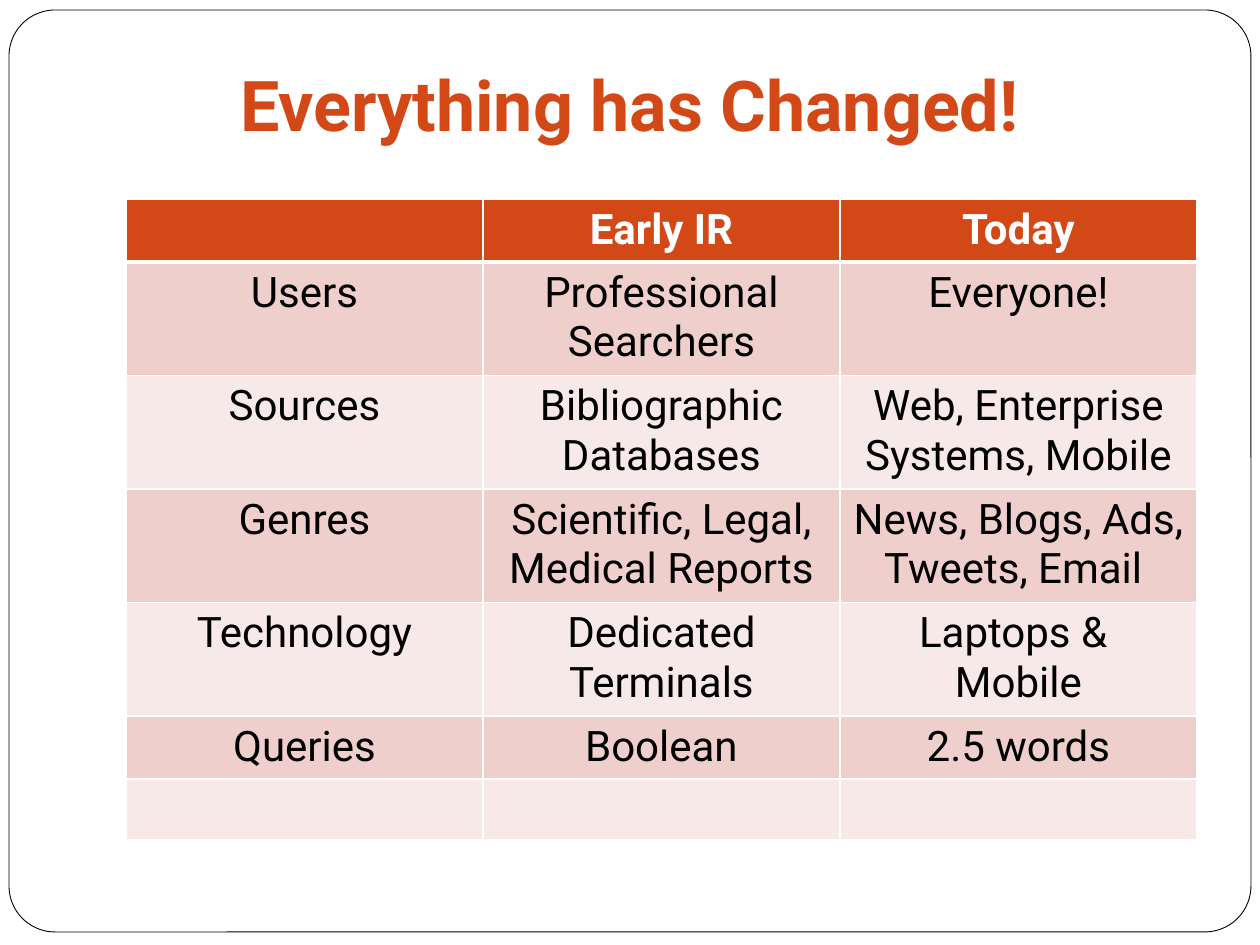
import pptx
import pptx.dml.color
import pptx.enum.shapes
import pptx.enum.text
import pptx.oxml
import pptx.oxml.ns
import pptx.util

# Content: a newline starts a new paragraph
TITLE = "Everything has Changed!"
COMPARISON = [
    ("", "Early IR", "Today"),
    ("Users", "Professional Searchers", "Everyone!"),
    ("Sources", "Bibliographic\nDatabases", "Web, Enterprise Systems, Mobile"),
    ("Genres", "Scientific, Legal, Medical Reports", "News, Blogs, Ads, Tweets, Email "),
    ("Technology", "Dedicated Terminals", "Laptops & \nMobile"),
    ("Queries", "Boolean", "2.5 words"),
    ("", "", ""),
]
TWO_LINE_ROWS = {1, 2, 3, 4}

# Format
COLOURS = {
    "accent": "D34817", "paper": "FFFFFF", "ink": "000000",
    "dark band": "EFCFCC", "light band": "F7E9E8",
}
TITLE_FONT = {"name": "Roboto", "size": pptx.util.Pt(40), "bold": True}
HEADER_FONT = {"name": "Roboto", "size": pptx.util.Pt(24), "bold": True}
BODY_FONT = {**HEADER_FONT, "bold": False}
TITLE_FRAME = {
    "word_wrap": True, "vertical_anchor": pptx.enum.text.MSO_ANCHOR.BOTTOM,
    "margin_left": pptx.util.Inches(0.1), "margin_right": pptx.util.Inches(0.1),
    "margin_top": pptx.util.Inches(0.05), "margin_bottom": pptx.util.Inches(0.1),
}
EMU_PER_PX = 914400 / 126
ONE_LINE, TWO_LINES = 61, 112
COLUMN_WIDTH = 357


def px(*lengths):
    return [pptx.util.Emu(round(n * EMU_PER_PX)) for n in lengths]


def rgb(colour):
    return pptx.dml.color.RGBColor.from_string(COLOURS[colour])


def apply(target, values):
    for attribute, value in values.items():
        setattr(target, attribute, value)


def write(frame, text, font, colour):
    frame.text = text
    for paragraph in frame.paragraphs:
        paragraph.alignment = pptx.enum.text.PP_ALIGN.CENTER
        for run in paragraph.runs:
            apply(run.font, font)
            run.font.color.rgb = rgb(colour)


def add_borders(cell, widths):
    properties = cell._tc.get_or_add_tcPr()
    for position, (side, points) in enumerate(widths.items()):
        properties.insert(position, pptx.oxml.parse_xml(
            f'<a:{side} {pptx.oxml.ns.nsdecls("a")} w="{pptx.util.Pt(points)}">'
            f'<a:solidFill><a:srgbClr val="{COLOURS["paper"]}"/></a:solidFill></a:{side}>'))


presentation = pptx.Presentation()
apply(presentation, dict(zip(("slide_width", "slide_height"), px(1260, 945))))
slide = presentation.slides.add_slide(presentation.slide_layouts[6])

# Rounded page frame
page_frame = slide.shapes.add_shape(
    pptx.enum.shapes.MSO_SHAPE.ROUNDED_RECTANGLE, *px(9, 10, 1242, 922))
page_frame.adjustments[0] = 0.05
page_frame.shadow.inherit = False
page_frame.fill.solid()
page_frame.fill.fore_color.rgb = rgb("paper")
page_frame.line.color.rgb = rgb("ink")
page_frame.line.width = pptx.util.Pt(0.5)

# Title
title = slide.shapes.add_textbox(*px(94, 0, 1071, 158)).text_frame
apply(title, TITLE_FRAME)
write(title, TITLE, TITLE_FONT, "accent")

# Comparison table
heights = [TWO_LINES if i in TWO_LINE_ROWS else ONE_LINE for i in range(len(COMPARISON))]
columns = len(COMPARISON[0])
table = slide.shapes.add_table(
    len(COMPARISON), columns,
    *px(126, 199, columns * COLUMN_WIDTH, sum(heights))).table
for column in table.columns:
    column.width = px(COLUMN_WIDTH)[0]
for i, (texts, height) in enumerate(zip(COMPARISON, heights)):
    table.rows[i].height = px(height)[0]
    is_header = i == 0
    band = "accent" if is_header else "dark band" if i % 2 else "light band"
    font, colour = (HEADER_FONT, "paper") if is_header else (BODY_FONT, "ink")
    borders = {"lnL": 1, "lnR": 1, "lnT": 3 if i == 1 else 1, "lnB": 3 if is_header else 1}
    for j, text in enumerate(texts):
        cell = table.cell(i, j)
        cell.fill.solid()
        cell.fill.fore_color.rgb = rgb(band)
        add_borders(cell, borders)
        if text:
            write(cell.text_frame, text, font, colour)

presentation.save("out.pptx")
